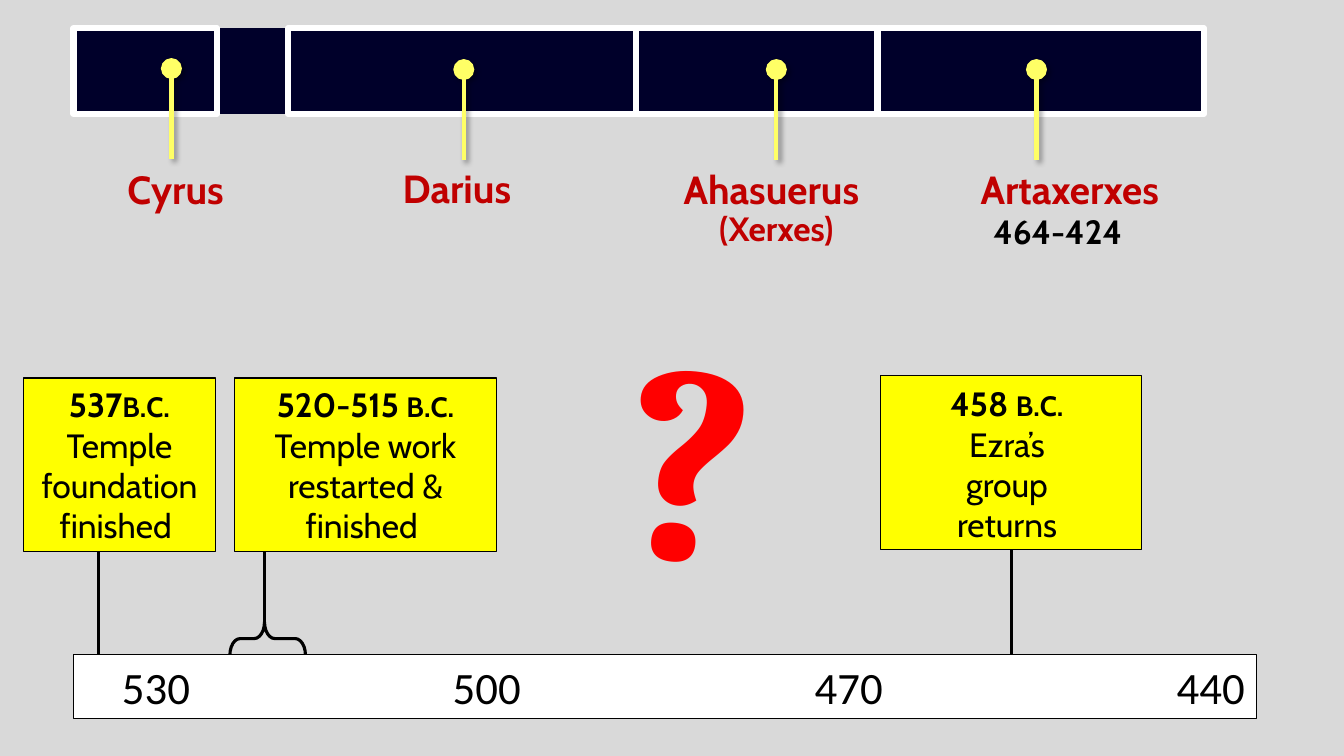
import pptx
import pptx.dml.color
import pptx.enum.shapes
import pptx.enum.text
import pptx.oxml
import pptx.oxml.ns
import pptx.util

Inches = pptx.util.Inches
Pt = pptx.util.Pt
SHAPES = pptx.enum.shapes.MSO_SHAPE
ALIGN = pptx.enum.text.PP_ALIGN
ANCHOR = pptx.enum.text.MSO_ANCHOR
BLACK, WHITE, NAVY, YELLOW = "000000", "FFFFFF", "00002A", "FFFF00"
POINTER, KING_RED, QUESTION_RED, BACKDROP = "FFFF66", "C00000", "FF0000", "D9D9D9"
SHADOW = (
    '<a:outerShdw blurRad="50800" dist="38100" dir="2700000" algn="tl" rotWithShape="0">'
    '<a:srgbClr val="000000"><a:alpha val="40000"/></a:srgbClr></a:outerShdw>'
)


def colour(hex_code):
    return pptx.dml.color.RGBColor.from_string(hex_code)


def drawing_xml(tag, attributes="", content=""):
    namespace = pptx.oxml.ns.nsdecls("a")
    return pptx.oxml.parse_xml(f"<a:{tag} {namespace} {attributes}>{content}</a:{tag}>")


class TimelineSlide:
    """Draws the timeline elements in one consistent style."""

    def __init__(self, presentation):
        self.font = "Cabin"
        self.slide = presentation.slides.add_slide(presentation.slide_layouts[6])
        fill = self.slide.background.fill
        fill.solid()
        fill.fore_color.rgb = colour(BACKDROP)

    def set_text(self, frame, paragraphs, align=ALIGN.CENTER, anchor=ANCHOR.TOP):
        frame.word_wrap = True
        frame.auto_size = pptx.enum.text.MSO_AUTO_SIZE.SHAPE_TO_FIT_TEXT
        frame.vertical_anchor = anchor
        for index, runs in enumerate(paragraphs):
            paragraph = frame.add_paragraph() if index else frame.paragraphs[0]
            paragraph.alignment = align
            for text, size, bold, ink, font in runs:
                run = paragraph.add_run()
                run.text = text
                run.font.size = Pt(size)
                run.font.bold = bold
                run.font.name = font
                run.font.color.rgb = colour(ink)

    def label(self, place, text, size, ink, font=None, align=ALIGN.CENTER, rotation=0):
        box = self.slide.shapes.add_textbox(*map(Inches, place))
        box.rotation = rotation
        self.set_text(box.text_frame, [[(text, size, True, ink, font or self.font)]], align)

    def block(self, place, fill, outline=None, width=0.75):
        block = self.slide.shapes.add_shape(SHAPES.RECTANGLE, *map(Inches, place))
        block.shadow.inherit = False
        block.fill.solid()
        block.fill.fore_color.rgb = colour(fill)
        if outline:
            block.line.color.rgb = colour(outline)
            block.line.width = Pt(width)
        else:
            block.line.fill.background()
        return block

    def event(self, place, year, lines, anchor=ANCHOR.MIDDLE):
        card = self.block(place, YELLOW, BLACK)
        heading = [
            (text, size, True, BLACK, self.font)
            for text, size in ((year, 24), ("B.C.", 20), (" ", 24))
        ]
        body = [[(line, 24, False, BLACK, self.font)] for line in lines]
        paragraphs = [heading + body[0]] if len(body) == 1 else [heading] + body
        self.set_text(card.text_frame, paragraphs, anchor=anchor)

    def stem(self, x, top, bottom, ink=BLACK, width=2.25, pointer=False):
        stem = self.slide.shapes.add_connector(
            pptx.enum.shapes.MSO_CONNECTOR.STRAIGHT, *map(Inches, (x, top, x, bottom))
        )
        stem.line.color.rgb = colour(ink)
        stem.line.width = Pt(width)
        properties = stem._element.spPr
        if pointer:
            outline = properties.find(pptx.oxml.ns.qn("a:ln"))
            outline.append(drawing_xml("headEnd", 'type="oval" w="lg" len="lg"'))
        properties.append(drawing_xml("effectLst", content=SHADOW if pointer else ""))

    def brace(self, place):
        brace = self.slide.shapes.add_shape(SHAPES.RIGHT_BRACE, *map(Inches, place))
        brace.adjustments[0], brace.adjustments[1] = 0.308, 0.458
        brace.rotation = 270
        brace.shadow.inherit = False
        brace.fill.background()
        brace.line.color.rgb = colour(BLACK)
        brace.line.width = Pt(2.25)

    def year_ruler(self, place, years):
        ruler = self.block(place, WHITE, BLACK)
        frame = ruler.text_frame
        frame.margin_right = 0
        stops = "".join(
            f'<a:tab pos="{Inches(centre - place[0] - 0.1)}" algn="ctr"/>'
            for centre in years.values()
        )
        properties = frame.paragraphs[0]._p.get_or_add_pPr()
        properties.append(drawing_xml("tabLst", content=stops))
        text = "".join(f"\t{year}" for year in years)
        runs = [(text, 32, False, BLACK, "Calibri")]
        self.set_text(frame, [runs], ALIGN.LEFT, ANCHOR.MIDDLE)


def main():
    presentation = pptx.Presentation()
    presentation.slide_width = Inches(13.33)
    presentation.slide_height = Inches(7.5)
    timeline = TimelineSlide(presentation)

    timeline.stem(10.03, 4.71, 6.5)
    timeline.brace((2.49, 5.96, 0.33, 0.75))

    timeline.block((2.15, 0.28, 0.71, 0.85), NAVY)
    for left, width in ((2.86, 3.5), (6.31, 2.39), (0.73, 1.42), (8.71, 3.23)):
        timeline.block((left, 0.28, width, 0.85), NAVY, WHITE, 4.5)

    kings = (
        ("Cyrus ", 1.7, 0.68, 0.83, 1.59, 1.91),
        ("Darius ", 4.6, 0.69, 3.62, 1.58, 1.91),
        ("Ahasuerus ", 7.7, 0.69, 6.46, 1.59, 2.47),
        ("Artaxerxes", 10.28, 0.69, 9.16, 1.59, 2.9),
    )
    for king, x, pointer_top, left, top, width in kings:
        timeline.stem(x, pointer_top, pointer_top + 0.9, POINTER, 3, pointer=True)
        timeline.label((left, top, width, 0.57), king, 28, KING_RED)
    timeline.label((6.25, 2.01, 2.9, 0.5), "(Xerxes)", 24, KING_RED)
    timeline.label((9.04, 2.04, 2.9, 0.5), "464-424", 24, BLACK)

    years = {"530": 1.55, "500": 4.83, "470": 8.42, "440": 12.01}
    timeline.year_ruler((0.73, 6.49, 11.73, 0.64), years)

    timeline.stem(0.98, 4.7, 6.49)
    timeline.stem(2.62, 4.7, 6.17)
    timeline.event((0.23, 3.75, 1.91, 1.72), "537", ["Temple foundation finished "])
    timeline.event(
        (2.33, 3.75, 2.59, 1.72), "520-515 ", ["Temple work restarted & finished "]
    )
    timeline.event(
        (8.73, 3.73, 2.59, 1.72), "458 ", ["Ezra’s ", "group ", "returns "], ANCHOR.BOTTOM
    )
    timeline.label(
        (6.12, 2.8, 2.59, 3.45), "?", 199, QUESTION_RED, "Cambria", ALIGN.LEFT, 5.8
    )
    presentation.save("out.pptx")


if __name__ == "__main__":
    main()
